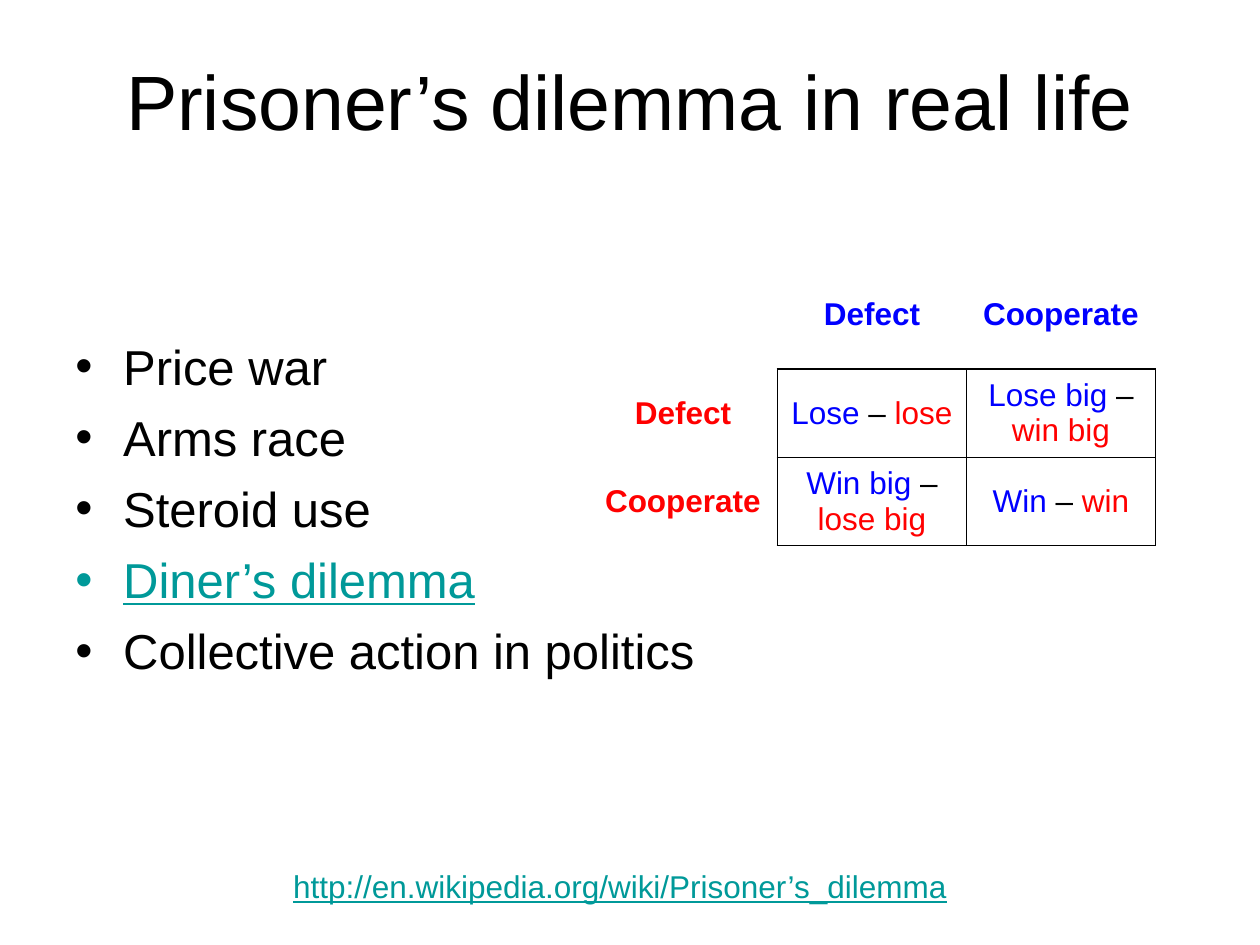
import pptx
import pptx.util
import pptx.dml.color
import pptx.enum.text
import pptx.oxml
import pptx.oxml.ns

Inches = pptx.util.Inches
Pt = pptx.util.Pt
RGBColor = pptx.dml.color.RGBColor
ALIGN = pptx.enum.text.PP_ALIGN
ANCHOR = pptx.enum.text.MSO_ANCHOR

BLACK = RGBColor(0, 0, 0)
WHITE = RGBColor(255, 255, 255)
BLUE = RGBColor(0, 0, 255)
RED = RGBColor(255, 0, 0)
TEAL = RGBColor(0, 153, 153)

TITLE = "Prisoner’s dilemma in real life"
EXAMPLES = [
    ("Price war", BLACK),
    ("Arms race", BLACK),
    ("Steroid use", BLACK),
    ("Diner’s dilemma", TEAL),
    ("Collective action in politics", BLACK),
]
ADDRESS = "http://en.wikipedia.org/wiki/Prisoner’s_dilemma"
PAYOFFS = [
    [[], [("Defect", BLUE)], [("Cooperate", BLUE)]],
    [
        [("Defect", RED)],
        [("Lose ", BLUE), ("– ", BLACK), ("lose", RED)],
        [("Lose big ", BLUE), ("– ", BLACK), ("win big", RED)],
    ],
    [
        [("Cooperate", RED)],
        [("Win big ", BLUE), ("–", BLACK), (" lose big", RED)],
        [("Win ", BLUE), ("–", BLACK), (" win", RED)],
    ],
]
COLUMN_WIDTH = 1.5
ROW_HEIGHTS = [0.86, 0.7, 0.7]


def add_span(para, text, size, color, bold=False):
    span = para.add_run()
    span.text = text
    span.font.name = "Arial"
    span.font.size = Pt(size)
    span.font.color.rgb = color
    span.font.bold = bold
    span.font.underline = color == TEAL


def place(shape, left, top, width, height):
    shape.left, shape.top = Inches(left), Inches(top)
    shape.width, shape.height = Inches(width), Inches(height)


def add_box(page, left, top, width, height):
    box = page.shapes.add_textbox(*map(Inches, (left, top, width, height)))
    box.text_frame.word_wrap = True
    return box.text_frame


def add_bullet(para):
    properties = para._p.get_or_add_pPr()
    properties.set("marL", str(Inches(0.38)))
    properties.set("indent", str(-Inches(0.38)))
    for markup in ('buFont {} typeface="Arial"', 'buChar {} char="•"'):
        element = markup.format(pptx.oxml.ns.nsdecls("a"))
        properties.append(pptx.oxml.parse_xml(f"<a:{element}/>"))


def set_borders(cell, drawn_sides):
    properties = cell._tc.get_or_add_tcPr()
    for position, side in enumerate("LRTB"):
        paint = '<a:solidFill><a:srgbClr val="000000"/></a:solidFill>' if side in drawn_sides else "<a:noFill/>"
        line = pptx.oxml.parse_xml(
            f'<a:ln{side} {pptx.oxml.ns.nsdecls("a")} w="{Pt(1)}">{paint}</a:ln{side}>'
        )
        properties.insert(position, line)


def add_payoffs(page):
    frame = page.shapes.add_table(
        len(PAYOFFS), len(PAYOFFS[0]), Inches(4.67), Inches(2.07),
        Inches(COLUMN_WIDTH * len(PAYOFFS[0])), Inches(sum(ROW_HEIGHTS)),
    )
    table = frame.table
    table.first_row = table.horz_banding = False
    for column in table.columns:
        column.width = Inches(COLUMN_WIDTH)
    for row_index, cells in enumerate(PAYOFFS):
        table.rows[row_index].height = Inches(ROW_HEIGHTS[row_index])
        for column_index, spans in enumerate(cells):
            cell = table.cell(row_index, column_index)
            cell.fill.solid()
            cell.fill.fore_color.rgb = WHITE
            cell.vertical_anchor = ANCHOR.MIDDLE
            if row_index and column_index:
                sides = "LRTB"
            elif column_index:
                sides = "B"
            else:
                sides = "R" if row_index else ""
            set_borders(cell, sides)
            para = cell.text_frame.paragraphs[0]
            para.alignment = ALIGN.CENTER
            for text, color in spans:
                add_span(para, text, 18, color, bold=len(spans) == 1)


def main():
    deck = pptx.Presentation()
    deck.slide_width, deck.slide_height = Inches(10), Inches(7.5)
    page = deck.slides.add_slide(deck.slide_layouts[5])

    title = page.shapes.title
    place(title, 0.5, 0.17, 9, 1.25)
    title.text_frame.vertical_anchor = ANCHOR.MIDDLE
    para = title.text_frame.paragraphs[0]
    para.alignment = ALIGN.CENTER
    add_span(para, TITLE, 44, BLACK)

    body = add_box(page, 0.5, 2.58, 9, 3.08)
    body.margin_top = Inches(0.09)
    for index, (text, color) in enumerate(EXAMPLES):
        para = body.add_paragraph() if index else body.paragraphs[0]
        add_bullet(para)
        if index:
            para.space_before = Pt(7)
        add_span(para, text, 28, color)

    para = add_box(page, 1.42, 6.83, 7, 0.4).paragraphs[0]
    para.alignment = ALIGN.CENTER
    add_span(para, ADDRESS, 18, TEAL)

    add_payoffs(page)
    deck.save("out.pptx")


if __name__ == "__main__":
    main()
